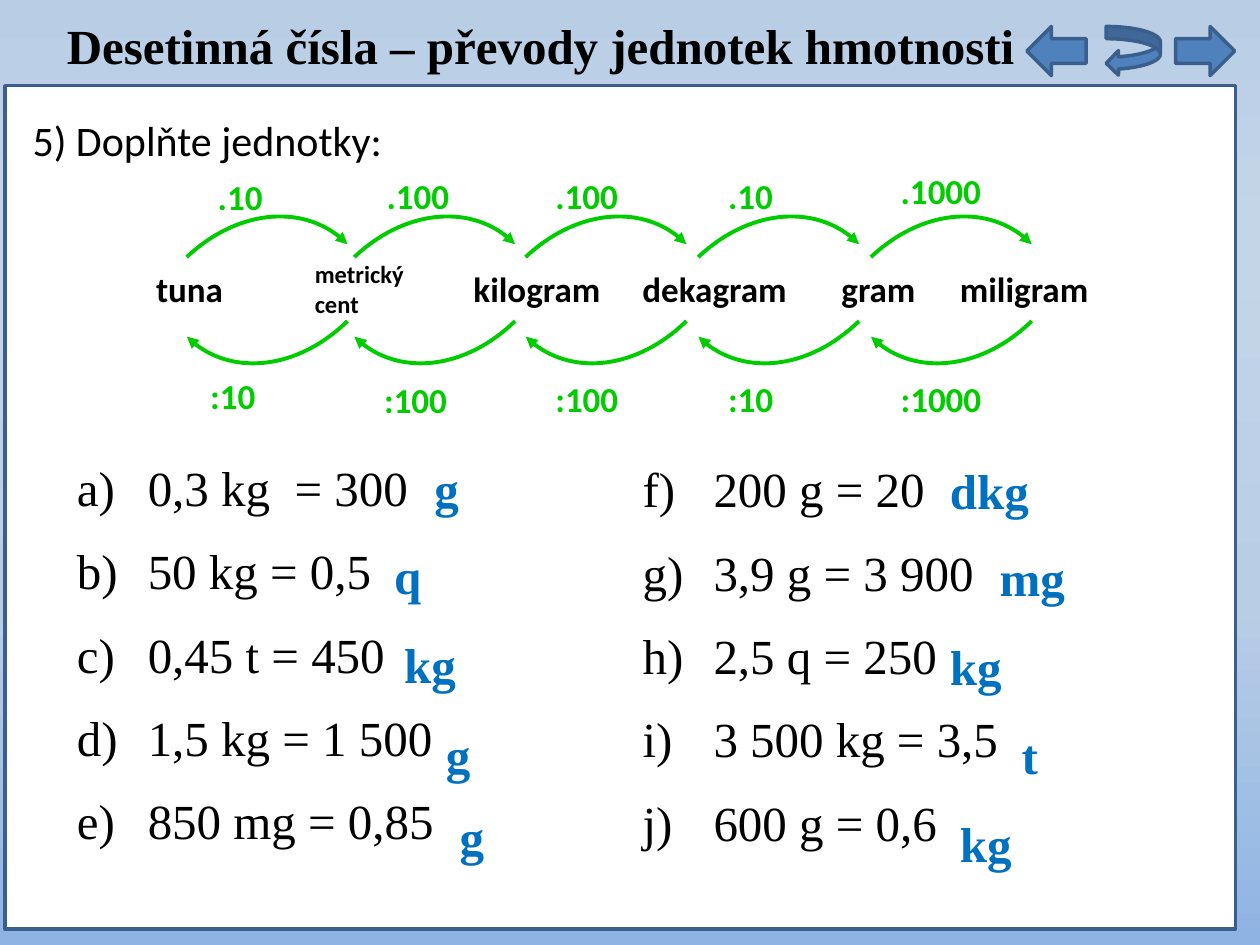
import copy
import dataclasses
import lxml.etree
import pptx
import pptx.dml.color
import pptx.enum.shapes
import pptx.enum.text
import pptx.oxml.ns
import pptx.util

KIND = pptx.enum.shapes.MSO_SHAPE
MID = pptx.enum.text.MSO_ANCHOR.MIDDLE
TOP = pptx.enum.text.MSO_ANCHOR.TOP
qn = pptx.oxml.ns.qn

# The grid has 100 columns and 75 rows of square cells
WIDE, HIGH = pptx.util.Inches(10), pptx.util.Inches(7.5)
CELL = WIDE // 100


@dataclasses.dataclass(frozen=True)
class Theme:
    sans: str = "Calibri"
    serif: str = "Times New Roman"
    ink: str = "000000"
    white: str = "FFFFFF"
    blue: str = "4F81BD"
    edge: str = "3A5F8C"
    green: str = "00CC00"
    reply: str = "0070C0"
    sky: tuple = ((0, "B9CDE5"), (0.25, "C5D5E9"), (0.64, "B9CDE5"), (1, "8EB4E3"))
    big: int = 28
    task: int = 24
    unit: int = 20
    small: int = 14


LOOK = Theme()

# Each step: left column, factor, its label place, divisor, its label place
STEPS = [
    (16.2, ".10", (16.3, 13.7), ":10", (15.7, 29.5)),
    (29.5, ".100", (29.7, 13.6), ":100", (29.5, 29.8)),
    (43.1, ".100", (43.1, 13.6), ":100", (43.1, 29.7)),
    (56.8, ".10", (56.8, 13.6), ":10", (56.8, 29.7)),
    (70.5, ".1000", (70.5, 13.2), ":1000", (70.5, 29.7)),
]
# A quarter of an ellipse: start, two handles, end; then row and turn
BEND = [(0, 0), (5.5, 0), (10, 3.6), (10, 8)]
OVER, UNDER = (15.9, 316.8), (22.1, 135.8)

UNITS = [
    ("tuna", 11.4, 8.6, LOOK.unit), ("metrický cent", 24, 11, LOOK.small),
    ("kilogram", 36.6, 13.4, LOOK.unit), ("dekagram", 50, 16.1, LOOK.unit),
    ("gram", 65.8, 9.4, LOOK.unit), ("miligram", 75.2, 13.4, LOOK.unit),
]
LEFT = ["0,3 kg  = 300", "50 kg = 0,5", "0,45 t = 450", "1,5 kg = 1 500", "850 mg = 0,85"]
RIGHT = ["200 g = 20", "3,9 g = 3 900", "2,5 q = 250", "3 500 kg = 3,5", "600 g = 0,6"]
# Each answer: text, left, top, width
REPLIES = [
    ("g", 33.5, 35.9, 4.7), ("q", 30.3, 42.8, 4.7), ("kg", 31.1, 49.9, 11.2),
    ("g", 34.4, 57, 10.1), ("g", 35.5, 63.5, 11.4),
    ("dkg", 74.4, 36.05, 13.4), ("mg", 78.35, 42.95, 9.4), ("kg", 74.4, 50, 7.9),
    ("t", 80.1, 57.1, 6.9), ("kg", 75.2, 64.1, 6.9),
]


def grid(*cells):
    return [round(n * CELL) for n in cells]


def tint(code):
    return pptx.dml.color.RGBColor.from_string(code)


def write(para, text, size, face, color, bold=False):
    run = para.add_run()
    run.text = text
    font = run.font
    font.size, font.name, font.bold = pptx.util.Pt(size), face, bold
    font.color.rgb = tint(color)


def place(shape, *cells):
    shape.left, shape.top, shape.width, shape.height = grid(*cells)
    frame = shape.text_frame
    frame.auto_size = pptx.enum.text.MSO_AUTO_SIZE.NONE
    frame.word_wrap = True
    return frame


def label(shapes, cells, text, size, face, color, bold=True, anchor=MID):
    frame = place(shapes.add_textbox(0, 0, 0, 0), *cells)
    frame.vertical_anchor = anchor
    write(frame.paragraphs[0], text, size, face, color, bold)
    return frame.paragraphs[0]


def space(para):
    """Put half a line before the paragraph."""
    props = para._p.get_or_add_pPr()
    gap = lxml.etree.SubElement(props, qn("a:spcBef"))
    lxml.etree.SubElement(gap, qn("a:spcPct"), val="50000")
    return props


def fill_list(holder, cells, items, start):
    frame = place(holder, *cells)
    for i, item in enumerate(items):
        para = frame.add_paragraph() if i else frame.paragraphs[0]
        props = space(para)
        dent = grid(5.63)[0]
        props.set("marL", str(dent))
        props.set("indent", str(-dent))
        lxml.etree.SubElement(props, qn("a:buFont"), typeface="+mj-lt")
        lxml.etree.SubElement(props, qn("a:buAutoNum"), type="alphaLcParenR", startAt=str(start))
        write(para, item, LOOK.big, LOOK.serif, LOOK.ink)


def block(shapes, kind, cells, color):
    shape = shapes.add_shape(kind, *grid(*cells))
    shape.shadow.inherit = False
    shape.fill.solid()
    shape.fill.fore_color.rgb = tint(color)
    shape.line.color.rgb = tint(LOOK.edge)
    shape.line.width = pptx.util.Pt(2)
    return shape


def arc(shapes, col, row, turn):
    """Draw a quarter of an ellipse with an arrowhead, then turn it."""
    dots = [grid(col + x, row + y) for x, y in BEND]
    pen = shapes.build_freeform(*dots[0], scale=1)
    pen.add_line_segments(dots[1:], close=False)
    shape = pen.convert_to_shape()
    shape.rotation = turn
    shape.shadow.inherit = False
    shape.fill.background()
    shape.line.color.rgb = tint(LOOK.green)
    shape.line.width = pptx.util.Pt(2.25)
    # Join the three line points into one curve
    track = shape._element.find(".//" + qn("a:path"))
    curve = lxml.etree.SubElement(track, qn("a:cubicBezTo"))
    for leg in track.findall(qn("a:lnTo")):
        curve.append(leg[0])
        track.remove(leg)
    line = shape._element.spPr.find(qn("a:ln"))
    lxml.etree.SubElement(line, qn("a:tailEnd"), type="triangle")


def paint(slide):
    fill = slide.background.fill
    fill.gradient()
    fill.gradient_angle = 270
    stops = slide.element.find(".//" + qn("a:gsLst"))
    while len(stops) < len(LOOK.sky):
        stops.append(copy.deepcopy(stops[0]))
    for stop, (spot, color) in zip(fill.gradient_stops, LOOK.sky):
        stop.position = spot
        stop.color.rgb = tint(color)


def main():
    deck = pptx.Presentation()
    deck.slide_width, deck.slide_height = WIDE, HIGH
    slide = deck.slides.add_slide(deck.slide_layouts[3])
    shapes = slide.shapes
    title, left, right = slide.placeholders

    # Background, with the white panel behind the text
    paint(slide)
    panel = block(shapes, KIND.RECTANGLE, (0.4, 6.8, 97.65, 66.95), LOOK.white)
    title._element.addprevious(panel._element)

    # Navigation arrows
    block(shapes, KIND.RIGHT_ARROW, (93.3, 2.1, 4.7, 3.9), LOOK.blue)
    block(shapes, KIND.LEFT_ARROW, (81.5, 2.1, 4.7, 3.9), LOOK.blue)
    block(shapes, KIND.CURVED_LEFT_ARROW, (87.8, 2.1, 4.3, 3.9), LOOK.blue)

    # Title and task
    head = place(title, 0.3, -0.3, 85.2, 7.7)
    head.vertical_anchor = MID
    write(head.paragraphs[0], "Desetinná čísla – převody jednotek hmotnosti",
          LOOK.big, LOOK.serif, LOOK.ink, True)
    label(shapes, (1.6, 7.55, 92.5, 7.1), "5) Doplňte jednotky:",
          LOOK.task, LOOK.sans, LOOK.ink, False)

    # Exercises and their answers
    fill_list(left, (5.1, 35.8, 52, 34), LEFT, 1)
    fill_list(right, (50, 35.9, 46.5, 34), RIGHT, 6)
    for text, x, y, wide in REPLIES:
        para = label(shapes, (x, y, wide, 5.7), text,
                     LOOK.big, LOOK.serif, LOOK.reply, anchor=TOP)
        space(para)

    # Chain of units with the factors between them
    for text, x, wide, size in UNITS:
        label(shapes, (x, 20.55, wide, 4.7), text, size, LOOK.sans, LOOK.ink)
    for col, times, above, parts, below in STEPS:
        for bend, text, spot in ((OVER, times, above), (UNDER, parts, below)):
            group = shapes.add_group_shape().shapes
            arc(group, col, *bend)
            label(group, (*spot, 11, 3.8), text, LOOK.unit, LOOK.sans, LOOK.green)

    deck.save("out.pptx")


if __name__ == "__main__":
    main()
